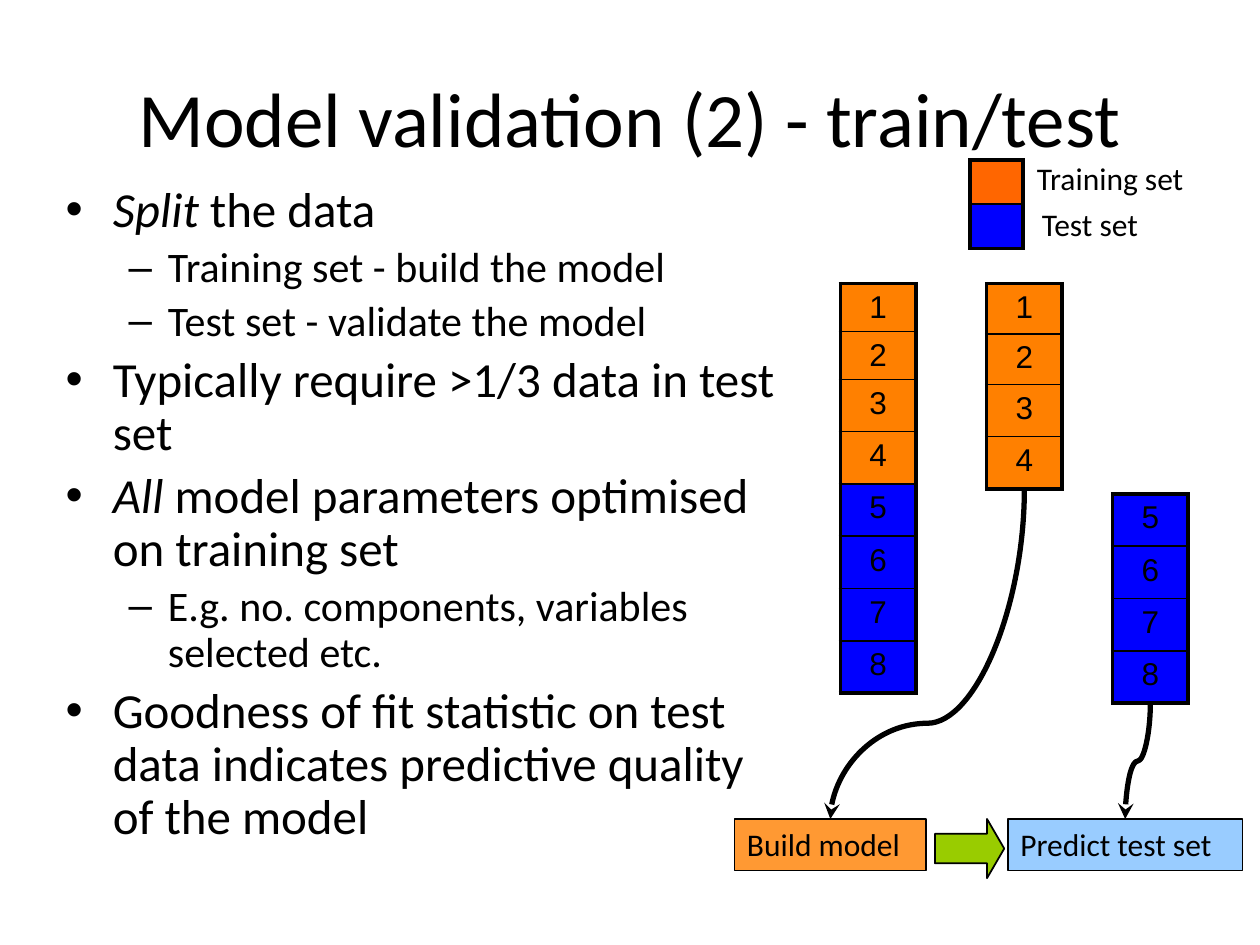
import pptx
import pptx.dml.color
import pptx.enum.shapes
import pptx.enum.text
import pptx.oxml
import pptx.oxml.ns
import pptx.util
import lxml.etree

BLACK = pptx.dml.color.RGBColor(0x00, 0x00, 0x00)
WHITE = pptx.dml.color.RGBColor(0xFF, 0xFF, 0xFF)
ORANGE = pptx.dml.color.RGBColor(0xFF, 0x80, 0x00)
KEY_ORANGE = pptx.dml.color.RGBColor(0xFF, 0x66, 0x00)
BUILD_ORANGE = pptx.dml.color.RGBColor(0xFF, 0x99, 0x33)
BLUE = pptx.dml.color.RGBColor(0x00, 0x00, 0xFF)
PALE_BLUE = pptx.dml.color.RGBColor(0x99, 0xCC, 0xFF)
GREEN = pptx.dml.color.RGBColor(0x99, 0xCC, 0x00)

COLUMNS, ROWS = 100, 75
SHAPES = pptx.enum.shapes.MSO_SHAPE
ALIGN = pptx.enum.text.PP_ALIGN
ANCHOR = pptx.enum.text.MSO_ANCHOR


def add_xml(parent, tag, **attributes):
    return lxml.etree.SubElement(parent, pptx.oxml.ns.qn(tag), attributes)


class ValidationSlide:
    text_font = "Calibri"
    cell_font = "Arial"
    label_size = 18
    level_sizes = (28, 24)
    outer_border, inner_border = 2.25, 1

    def __init__(self, deck):
        self.unit_x = deck.slide_width / COLUMNS
        self.unit_y = deck.slide_height / ROWS
        self.page = deck.slides.add_slide(deck.slide_layouts[1])

    def place(self, column, row, width, height):
        return [round(column * self.unit_x), round(row * self.unit_y),
                round(width * self.unit_x), round(height * self.unit_y)]

    def style(self, para, size, font=text_font):
        for span in para.runs:
            span.font.name = font
            span.font.size = pptx.util.Pt(size)
            span.font.color.rgb = BLACK

    def move(self, box, *area):
        box.left, box.top, box.width, box.height = self.place(*area)
        box.text_frame.auto_size = pptx.enum.text.MSO_AUTO_SIZE.NONE

    def title(self, text, *area):
        box = self.page.shapes.title
        self.move(box, *area)
        box.text_frame.text = text
        box.text_frame.vertical_anchor = ANCHOR.MIDDLE
        box.text_frame.paragraphs[0].alignment = ALIGN.CENTER
        self.style(box.text_frame.paragraphs[0], 44)

    def bullets(self, items, *area):
        box = self.page.placeholders[1]
        self.move(box, *area)
        frame = box.text_frame
        for index, (level, emphasis, text) in enumerate(items):
            para = frame.add_paragraph() if index else frame.paragraphs[0]
            para.level = level
            para.line_spacing = 0.9
            if emphasis:
                span = para.add_run()
                span.text = emphasis
                span.font.italic = True
            para.add_run().text = text
            self.style(para, self.level_sizes[level])

    def shape(self, kind, fill, line_width, *area):
        box = self.page.shapes.add_shape(kind, *self.place(*area))
        box.shadow.inherit = False
        if fill is None:
            box.fill.background()
        else:
            box.fill.solid()
            box.fill.fore_color.rgb = fill
        if line_width:
            box.line.color.rgb = BLACK
            box.line.width = pptx.util.Pt(line_width)
        else:
            box.line.fill.background()
        return box

    def label(self, text, fill, line_width, *area):
        frame = self.shape(SHAPES.RECTANGLE, fill, line_width, *area).text_frame
        frame.word_wrap = True
        frame.vertical_anchor = ANCHOR.TOP
        frame.text = text
        frame.paragraphs[0].alignment = ALIGN.LEFT
        self.style(frame.paragraphs[0], self.label_size)

    def border(self, cell, is_first, is_last):
        widths = {"a:lnL": self.outer_border, "a:lnR": self.outer_border,
                  "a:lnT": self.outer_border if is_first else self.inner_border,
                  "a:lnB": self.outer_border if is_last else self.inner_border}
        properties = cell._tc.get_or_add_tcPr()
        for position, (tag, width) in enumerate(widths.items()):
            line = add_xml(properties, tag, w=str(pptx.util.Pt(width)))
            add_xml(add_xml(line, "a:solidFill"), "a:srgbClr", val=str(BLACK))
            properties.insert(position, line)

    def stack(self, cells, *area, short_rows=0, short_height=0):
        column, row, width, height = area
        count = len(cells)
        table = self.page.shapes.add_table(count, 1, *self.place(*area)).table
        table.first_row = table.horz_banding = False
        tall = (height - short_rows * short_height) / (count - short_rows)
        for index, (text, fill) in enumerate(cells):
            row_height = short_height if index < short_rows else tall
            table.rows[index].height = round(row_height * self.unit_y)
            cell = table.cell(index, 0)
            cell.fill.solid()
            cell.fill.fore_color.rgb = fill
            if text:
                para = cell.text_frame.paragraphs[0]
                para.text = text
                para.alignment = ALIGN.CENTER
                self.style(para, self.label_size, self.cell_font)
            else:
                cell.margin_top = cell.margin_bottom = 0
            self.border(cell, index == 0, index == count - 1)

    def down_curve(self, start, end, bend):
        (x1, y1), (x2, y2) = start, end
        middle_x, middle_y = (x1 + x2) / 2, (y1 + y2) / 2
        half_length, half_shift = (y2 - y1) / 2, (x1 - x2) / 2
        line = self.page.shapes.add_connector(
            pptx.enum.shapes.MSO_CONNECTOR.CURVE,
            *self.place(middle_x - half_length, middle_y - half_shift,
                        middle_x + half_length, middle_y + half_shift))
        line.line.color.rgb = BLACK
        line.line.width = pptx.util.Pt(3)
        properties = line._element.spPr
        properties.find(pptx.oxml.ns.qn("a:xfrm")).set("rot", "5400000")
        guides = properties.find(".//" + pptx.oxml.ns.qn("a:avLst"))
        add_xml(guides, "a:gd", name="adj1", fmla=f"val {round(bend * 100000)}")
        add_xml(line.line._get_or_add_ln(), "a:tailEnd", type="stealth")
        add_xml(properties, "a:effectLst")

    def block_arrow(self, *area):
        arrow = self.shape(SHAPES.RIGHT_ARROW, GREEN, 1, *area)
        arrow.adjustments[0] = 0.5
        arrow.adjustments[1] = 0.29


def main():
    deck = pptx.Presentation()
    deck.slide_width = pptx.util.Inches(10)
    deck.slide_height = pptx.util.Inches(7.5)
    slide = ValidationSlide(deck)

    slide.title("Model validation (2) - train/test", 5, 3, 90, 12.5)
    slide.bullets([
        (0, "Split", " the data"),
        (1, "", "Training set - build the model"),
        (1, "", "Test set - validate the model"),
        (0, "", "Typically require >1/3 data in test set"),
        (0, "All ", "model parameters optimised on training set"),
        (1, "", "E.g. no. components, variables selected etc."),
        (0, "", "Goodness of fit statistic on test data indicates "
                "predictive quality of the model"),
    ], 4.2, 14.2, 59.2, 57.5)

    training = [(str(number), ORANGE) for number in range(1, 5)]
    test = [(str(number), BLUE) for number in range(5, 9)]
    slide.stack(training + test, 66.7, 22.5, 6, 32.5, short_rows=2, short_height=3.8)
    slide.stack([("", KEY_ORANGE), ("", BLUE)], 77, 12.7, 4.2, 7)
    slide.label("Training set", None, 0, 81.3, 12.1, 15.1, 4)
    slide.label("Test set", WHITE, 0, 81.7, 15.8, 10.9, 4)
    slide.stack(training, 78.3, 22.5, 6, 16.3, short_rows=2, short_height=4)
    slide.stack(test, 88.3, 39.2, 6, 16.6)

    slide.label("Build model", BUILD_ORANGE, 1, 58.3, 65, 15.2, 4.1)
    slide.down_curve((81.3, 38.8), (65.9, 65), 0.71)
    slide.label("Predict test set", PALE_BLUE, 0.75, 80, 65, 18.6, 4.1)
    slide.down_curve((91.3, 55.8), (89.3, 65), 0.5)
    slide.block_arrow(74.2, 65, 5.5, 4.7)

    deck.save("out.pptx")


if __name__ == "__main__":
    main()
